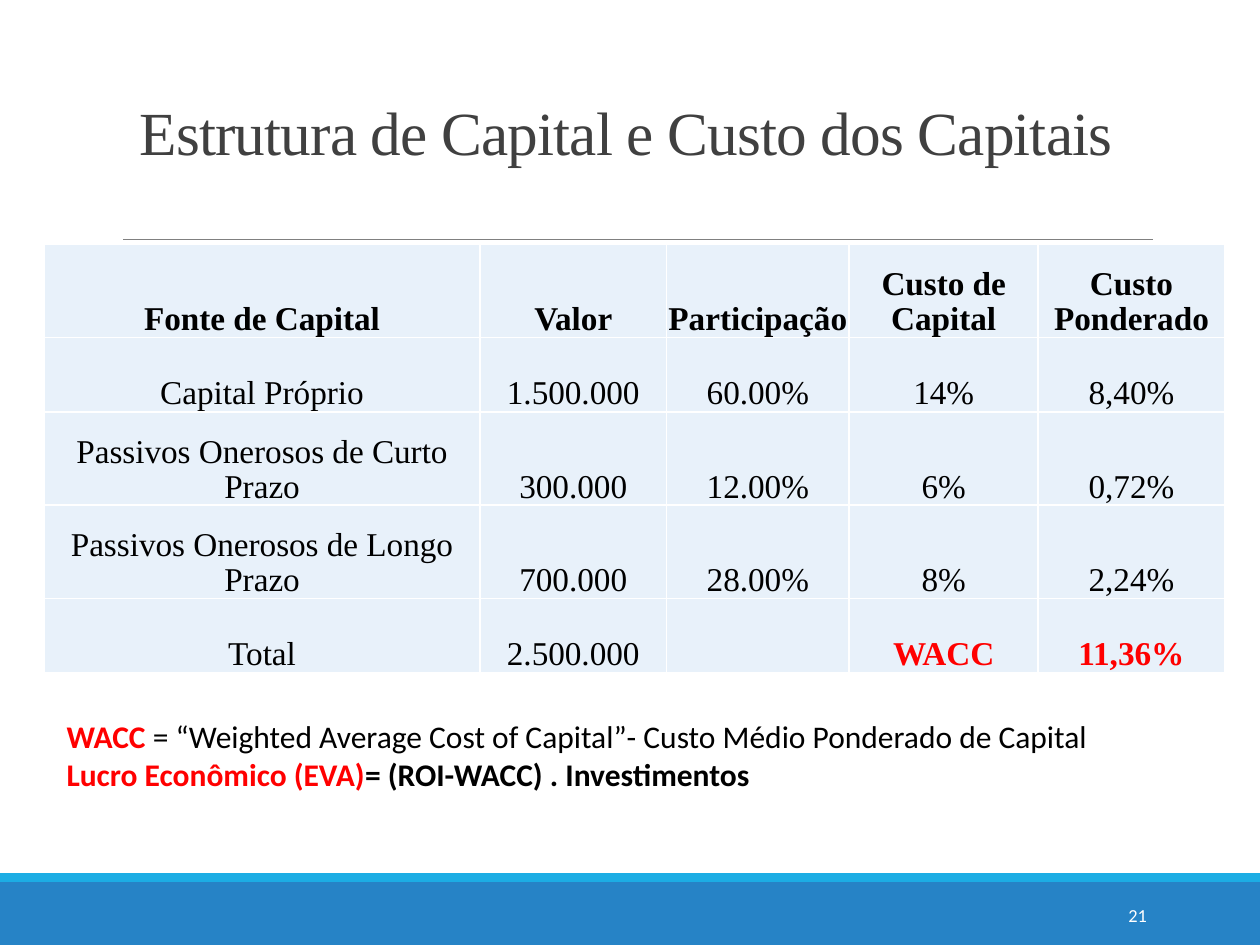
"""Build the slide on capital structure and cost of capital."""
from lxml.etree import SubElement
from pptx import Presentation
from pptx.dml.color import RGBColor
from pptx.enum.shapes import MSO_CONNECTOR, MSO_SHAPE
from pptx.enum.text import MSO_ANCHOR, PP_ALIGN
from pptx.oxml.ns import qn
from pptx.util import Inches, Pt

TITLE = "Estrutura de Capital e Custo dos Capitais "
ROWS = [
    ("Fonte de Capital", "Valor", "Participação", "Custo de Capital", "Custo Ponderado"),
    ("Capital Próprio", "1.500.000", "60.00%", "14%", "8,40%"),
    ("Passivos Onerosos de Curto Prazo", "300.000", "12.00%", "6%", "0,72%"),
    ("Passivos Onerosos de Longo Prazo", "700.000", "28.00%", "8%", "2,24%"),
    ("Total", "2.500.000", "", "WACC", "11,36%"),
]
HIGHLIGHTS = ("WACC", "11,36%")
COLUMN_WIDTHS = (3.46, 1.48, 1.45, 1.5, 1.48)
ROW_HEIGHTS = (0.74, 0.59, 0.74, 0.74, 0.59)
RED, BLACK = "FF0000", "000000"
NOTES = [
    [("WACC ", RED, True),
     ("= “Weighted Average Cost of Capital”- Custo Médio Ponderado de Capital", BLACK, False)],
    [("Lucro Econômico (EVA)", RED, True), ("= (ROI-WACC) . Investimentos", BLACK, True)],
]
BANDS = [(7, 0.5, "2683C6"), (6.93, 0.07, "1CADE4")]


def color(value):
    return RGBColor.from_string(value)


def write(paragraph, text, *, size, font="Calibri", fill=BLACK, bold=False,
          align=None, line_spacing=None, tracking=None):
    paragraph.alignment = align
    paragraph.line_spacing = line_spacing
    run = paragraph.add_run()
    run.text = text
    run.font.size = Pt(size)
    run.font.name = font
    run.font.bold = bold
    run.font.color.rgb = color(fill)
    if tracking is not None:
        run.font._element.set("spc", str(round(tracking * 100)))


def add_text_frame(slide, left, top, width, height, anchor):
    box = slide.shapes.add_textbox(Inches(left), Inches(top), Inches(width), Inches(height))
    frame = box.text_frame
    frame.word_wrap = True
    frame.vertical_anchor = anchor
    return frame


def add_borders(cell):
    properties = cell._tc.get_or_add_tcPr()
    for position, side in enumerate(("lnL", "lnR", "lnT", "lnB")):
        line = SubElement(properties, qn(f"a:{side}"), w=str(Pt(1)))
        fill = SubElement(line, qn("a:solidFill"))
        SubElement(fill, qn("a:srgbClr"), val="FFFFFF")
        properties.insert(position, line)


def add_background(slide):
    for top, height, fill in BANDS:
        band = slide.shapes.add_shape(
            MSO_SHAPE.RECTANGLE, 0, Inches(top), Inches(10), Inches(height))
        band.shadow.inherit = False
        band.fill.solid()
        band.fill.fore_color.rgb = color(fill)
        band.line.fill.background()
    rule = slide.shapes.add_connector(
        MSO_CONNECTOR.STRAIGHT, Inches(0.98), Inches(1.9), Inches(9.15), Inches(1.9))
    rule.line.color.rgb = color("808080")
    rule.line.width = Pt(0.5)
    SubElement(rule._element.spPr, qn("a:effectLst"))


def add_capital_table(slide):
    table = slide.shapes.add_table(
        len(ROWS), len(COLUMN_WIDTHS), Inches(0.35), Inches(1.94),
        Inches(sum(COLUMN_WIDTHS)), Inches(sum(ROW_HEIGHTS))).table
    for column, width in zip(table.columns, COLUMN_WIDTHS):
        column.width = Inches(width)
    for row, height in zip(table.rows, ROW_HEIGHTS):
        row.height = Inches(height)
    for row_index, values in enumerate(ROWS):
        for column_index, text in enumerate(values):
            cell = table.cell(row_index, column_index)
            cell.fill.solid()
            cell.fill.fore_color.rgb = color("E8F1FA")
            cell.vertical_anchor = MSO_ANCHOR.BOTTOM
            cell.margin_left = cell.margin_right = cell.margin_top = Inches(0.01)
            cell.margin_bottom = 0
            add_borders(cell)
            if text:
                highlighted = text in HIGHLIGHTS
                write(cell.text_frame.paragraphs[0], text, size=19, font="Times New Roman",
                      fill=RED if highlighted else BLACK, bold=highlighted or row_index == 0,
                      align=PP_ALIGN.CENTER, line_spacing=0.95)


def main():
    presentation = Presentation()
    presentation.slide_width, presentation.slide_height = Inches(10), Inches(7.5)
    slide = presentation.slides.add_slide(presentation.slide_layouts[6])
    add_background(slide)
    title = add_text_frame(slide, 0.9, 0.31, 8.25, 1.07, MSO_ANCHOR.BOTTOM)
    write(title.paragraphs[0], TITLE, size=35, font="Times New Roman", fill="404040",
          align=PP_ALIGN.CENTER, line_spacing=0.85, tracking=-0.5)
    add_capital_table(slide)
    number = add_text_frame(slide, 8.12, 7.06, 1.08, 0.4, MSO_ANCHOR.MIDDLE)
    write(number.paragraphs[0], "21", size=10.5, fill="FFFFFF", align=PP_ALIGN.RIGHT)
    notes = add_text_frame(slide, 0.43, 5.64, 9.13, 1.01, MSO_ANCHOR.TOP)
    for index, runs in enumerate(NOTES):
        paragraph = notes.add_paragraph() if index else notes.paragraphs[0]
        for text, fill, bold in runs:
            write(paragraph, text, size=18, fill=fill, bold=bold)
    presentation.save("out.pptx")


if __name__ == "__main__":
    main()
